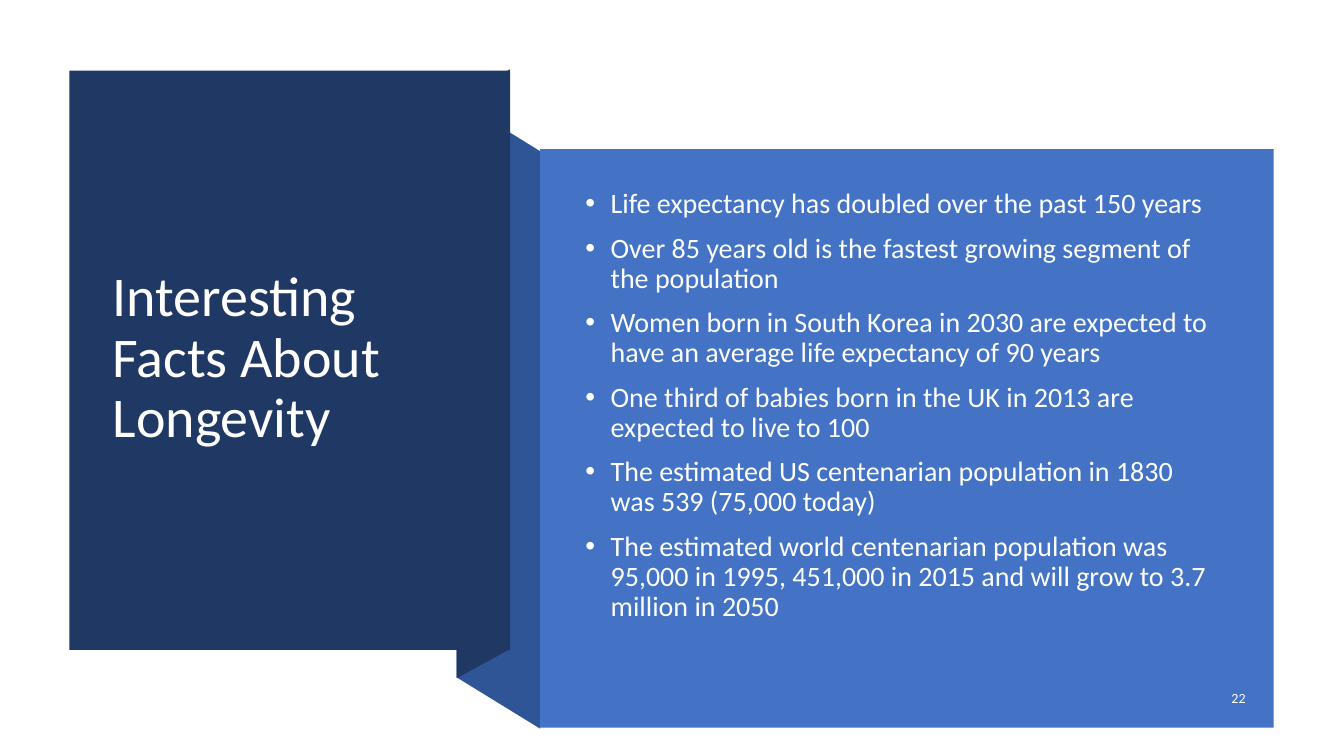
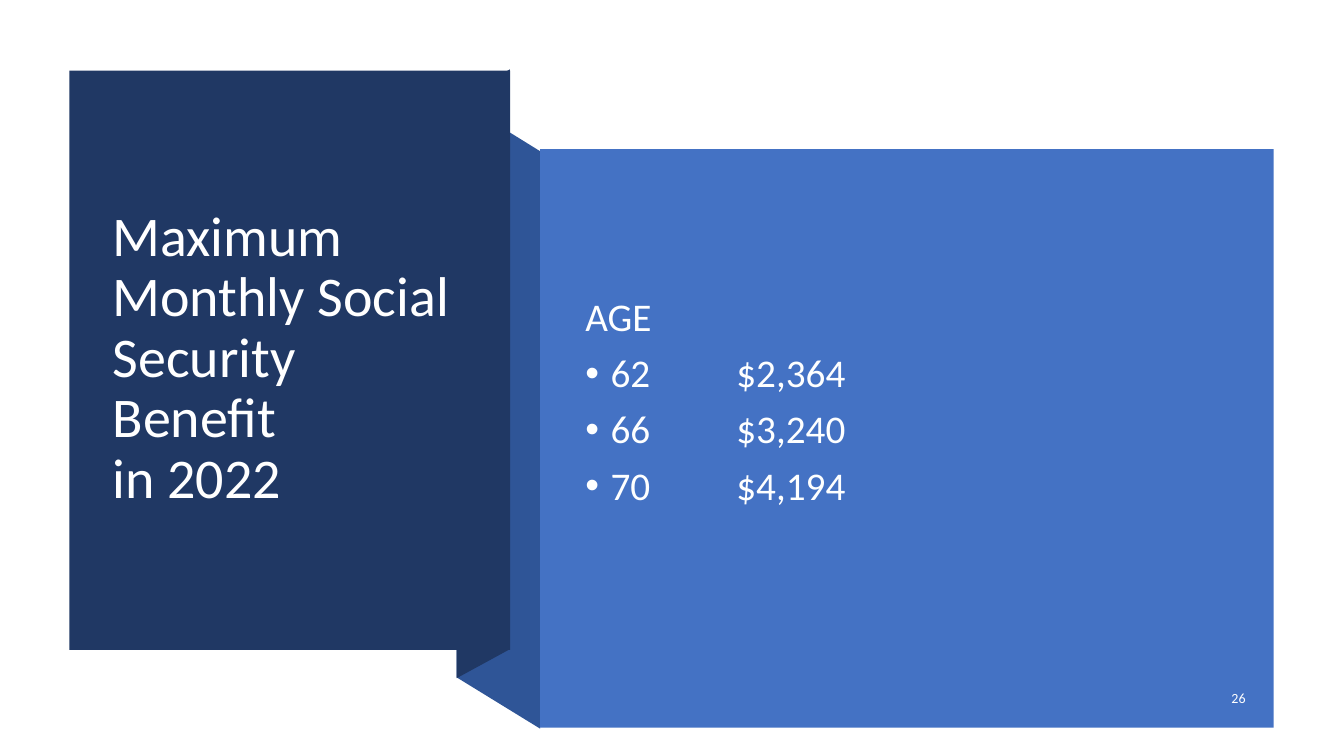
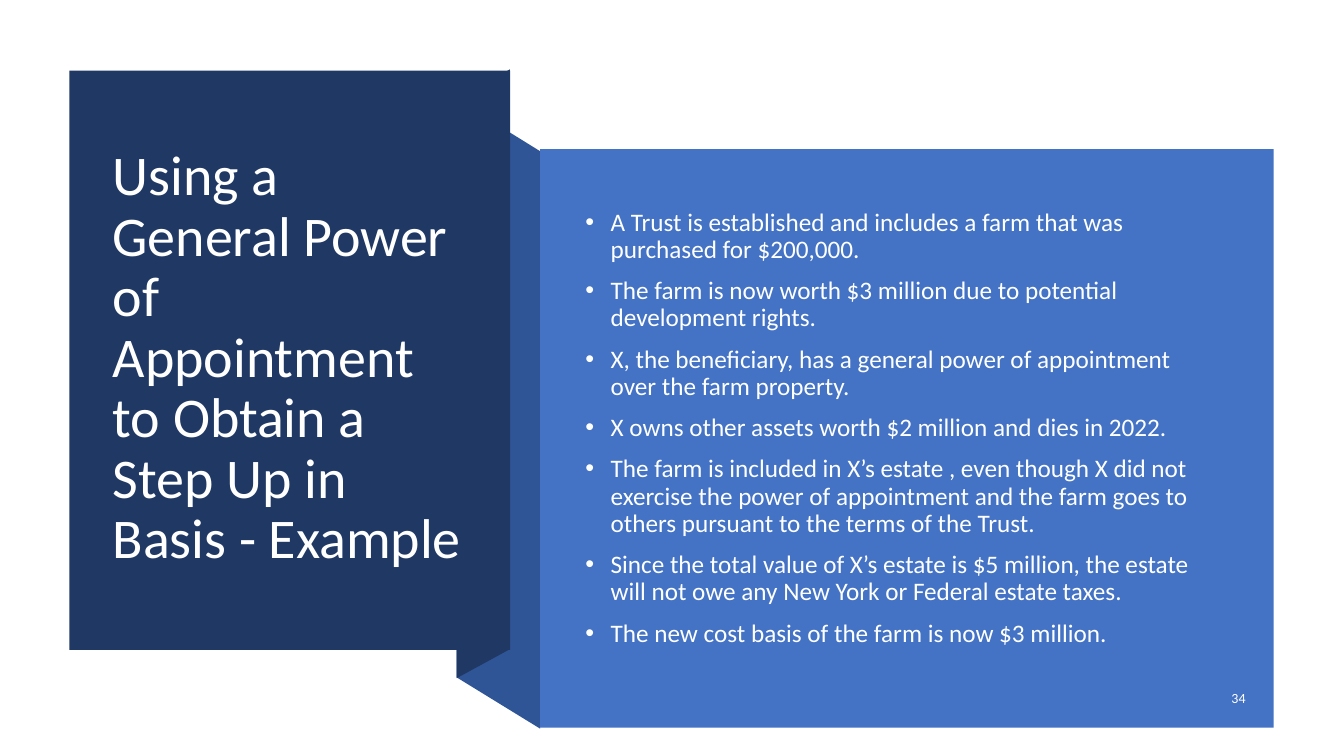
"""Build three longevity and estate planning slides."""
from dataclasses import dataclass
from typing import NamedTuple

from lxml import etree
from pptx import Presentation
from pptx.dml.color import RGBColor
from pptx.enum.shapes import MSO_SHAPE
from pptx.enum.text import MSO_ANCHOR, PP_ALIGN
from pptx.oxml.ns import qn
from pptx.shapes.autoshape import Shape
from pptx.slide import Slide
from pptx.util import Cm, Pt

RECT = MSO_SHAPE.RECTANGLE
MIDDLE = MSO_ANCHOR.MIDDLE
LEFT, RIGHT = PP_ALIGN.LEFT, PP_ALIGN.RIGHT


@dataclass(frozen=True)
class Theme:
    font: str = "Calibri"
    navy: str = "203864"
    fold: str = "2F5597"
    blue: str = "4472C4"
    white: str = "FFFFFF"
    pale: str = "FEFFFF"
    title: int = 40
    note: int = 10
    tight: float = 0.9


class Box(NamedTuple):
    left: float
    top: float
    width: float
    height: float


class Line(NamedTuple):
    text: str
    dot: bool = True


@dataclass(frozen=True)
class Page:
    title: str
    lines: list[Line]
    size: int
    number: int
    foot: float = 0.13


THEME = Theme()
PANEL = Box(1.75, 1.78, 11.11, 14.6)
CARD = Box(13.61, 3.76, 18.49, 14.58)
TITLE = Box(2.59, 2.72, 9.42, 12.67)
BODY = Box(14.5, 4.78, 16.54, 12.04)
NUMBER = Box(29.74, 17.15, 1.9, 0.89)
BACK = [(13.61, 18.36), (11.51, 17.07), (11.51, 2.51), (13.61, 3.81)]
FLAP = [(12.85, 16.36), (11.51, 17.09), (11.51, 2.49), (12.85, 1.75)]
DENT = Cm(0.64)

PAGES = [
    Page("Interesting Facts About Longevity", [
        Line("Life expectancy has doubled over the past 150 years"),
        Line("Over 85 years old is the fastest growing segment of the population"),
        Line("Women born in South Korea in 2030 are expected to have an average life expectancy of 90 years"),
        Line("One third of babies born in the UK in 2013 are expected to live to 100"),
        Line("The estimated US centenarian population in 1830 was 539 (75,000 today)"),
        Line("The estimated world centenarian population was 95,000 in 1995, 451,000 in 2015 and will grow to 3.7 million in 2050"),
    ], size=20, number=22, foot=1.25),
    Page("Maximum Monthly Social Security Benefit \nin 2022", [
        Line("AGE", dot=False),
        Line("62\t\t$2,364"),
        Line("66\t\t$3,240\t"),
        Line("70\t\t$4,194"),
    ], size=28, number=26, foot=1.41),
    Page("Using a General Power of Appointment to Obtain a Step Up in Basis - Example", [
        Line("A Trust is established and includes a farm that was purchased for $200,000."),
        Line("The farm is now worth $3 million due to potential development rights."),
        Line("X, the beneficiary, has a general power of appointment over the farm property."),
        Line("X owns other assets worth $2 million and dies in 2022."),
        Line("The farm is included in X’s estate , even though X did not exercise the power of appointment and the farm goes to others pursuant to the terms of the Trust."),
        Line("Since the total value of X’s estate is $5 million, the estate will not owe any New York or Federal estate taxes."),
        Line("The new cost basis of the farm is now $3 million."),
    ], size=18, number=34),
]


def paint(shape: Shape, color: str) -> None:
    """Give a shape a flat fill."""
    shape.shadow.inherit = False
    shape.fill.solid()
    shape.fill.fore_color.rgb = RGBColor.from_string(color)
    shape.line.fill.background()


def block(slide: Slide, box: Box, color: str) -> None:
    """Draw a filled rectangle."""
    paint(slide.shapes.add_shape(RECT, *map(Cm, box)), color)


def facet(slide: Slide, points: list[tuple[float, float]], color: str) -> None:
    """Draw a filled polygon."""
    first, *rest = [(Cm(x), Cm(y)) for x, y in points]
    pen = slide.shapes.build_freeform(*first)
    pen.add_line_segments(rest, close=True)
    paint(pen.convert_to_shape(), color)


def write(slide: Slide, box: Box, lines: list[Line], *, size: int,
          color: str = THEME.white, align: PP_ALIGN = LEFT, pitch: float = 1.0,
          before: int = 0, after: int = 0, foot: float = 0.13) -> None:
    """Write lines of text in a box."""
    frame = slide.shapes.add_textbox(*map(Cm, box)).text_frame
    frame.word_wrap = True
    frame.vertical_anchor = MIDDLE
    frame.margin_bottom = Cm(foot)
    for index, line in enumerate(lines):
        para = frame.add_paragraph() if index else frame.paragraphs[0]
        para.text = line.text
        para.alignment = align
        para.line_spacing = pitch
        para.space_before, para.space_after = Pt(before), Pt(after)
        for run in para.runs:
            run.font.name = THEME.font
            run.font.size = Pt(size)
            run.font.color.rgb = RGBColor.from_string(color)
        if line.dot:
            props = para._p.get_or_add_pPr()
            props.set("marL", str(DENT))
            props.set("indent", str(-DENT))
            etree.SubElement(props, qn("a:buFont"), typeface="Arial")
            etree.SubElement(props, qn("a:buChar"), char="•")


def draw(slide: Slide, page: Page) -> None:
    """Draw one page on its folded ribbon."""
    facet(slide, BACK, THEME.fold)
    facet(slide, FLAP, THEME.navy)
    block(slide, PANEL, THEME.navy)
    write(slide, TITLE, [Line(page.title, dot=False)], size=THEME.title,
          pitch=THEME.tight)
    block(slide, CARD, THEME.blue)
    write(slide, BODY, page.lines, size=page.size, color=THEME.pale,
          pitch=THEME.tight, before=10, foot=page.foot)
    write(slide, NUMBER, [Line(str(page.number), dot=False)], size=THEME.note,
          align=RIGHT, after=6)


def main() -> None:
    """Build and save the deck."""
    deck = Presentation()
    deck.slide_width, deck.slide_height = Cm(33.87), Cm(19.05)
    blank = deck.slide_layouts[6]
    for page in PAGES:
        draw(deck.slides.add_slide(blank), page)
    deck.save("out.pptx")


if __name__ == "__main__":
    main()
